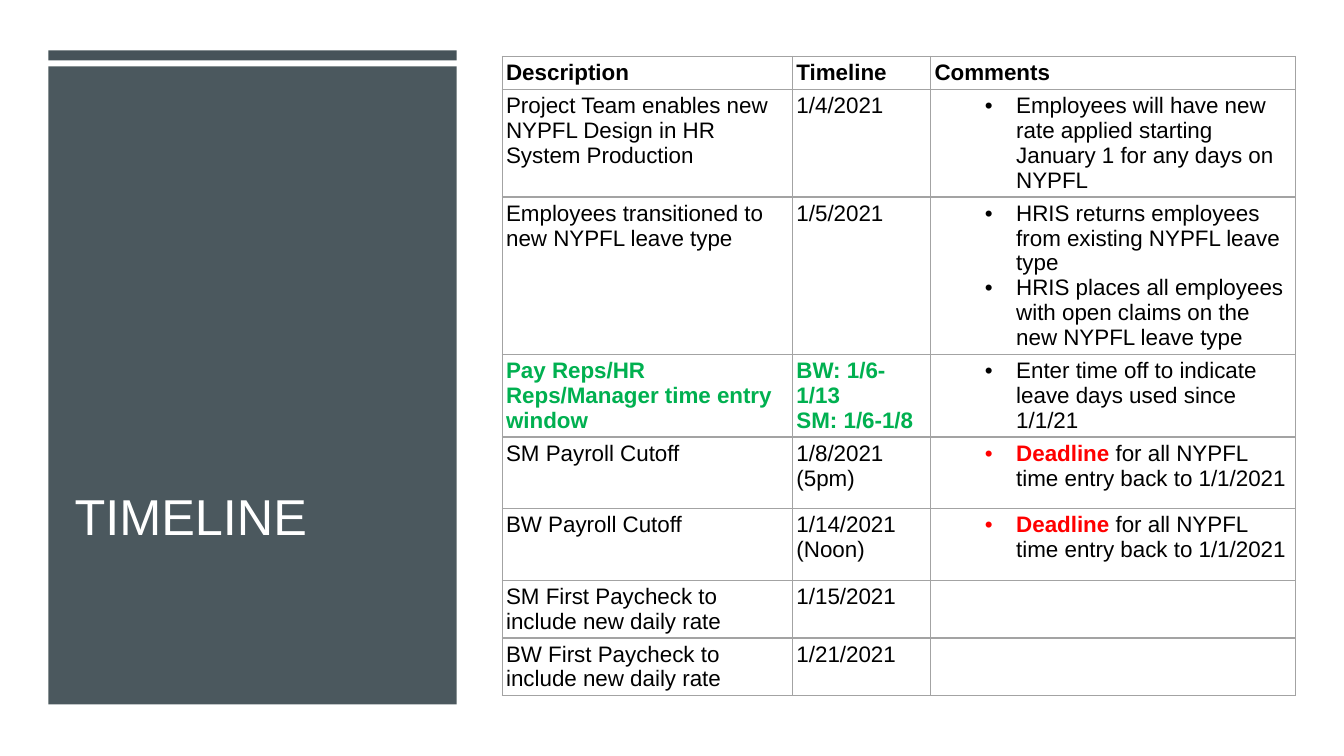
from dataclasses import dataclass

from lxml import etree
from pptx import Presentation
from pptx.dml.color import RGBColor
from pptx.enum.shapes import MSO_SHAPE
from pptx.enum.text import MSO_ANCHOR, PP_ALIGN
from pptx.oxml.ns import qn
from pptx.util import Inches, Pt

RECT = MSO_SHAPE.RECTANGLE
BOTTOM = MSO_ANCHOR.BOTTOM
LEFT = PP_ALIGN.LEFT


@dataclass(frozen=True)
class Theme:
    """Colours, font and type sizes of the slide."""
    font: str = "Arial"
    title_size: int = 36
    table_size: int = 16
    panel: str = "465359"
    white: str = "FFFFFF"
    black: str = "000000"
    green: str = "00B050"
    red: str = "FF0000"
    border: str = "A3A3A3"


T = Theme()
PANEL_LEFT, PANEL_WIDTH = 0.48, 4.05
COL_WIDTHS = [2.88, 1.37, 3.62]
ROW_HEIGHTS = [0.27, 0.71, 1.02, 0.43, 0.71, 0.71, 0.27, 0.27]
CELL_INSET = 0.04
BULLET_LEFT, BULLET_HANG = 0.81, 0.31

HEADERS = ["Description", "Timeline", "Comments"]
DEADLINE = [("Deadline", T.red, True),
            (" for all NYPFL time entry back to 1/1/2021", T.black, False)]
PLAIN, KEY = (T.black, False), (T.green, True)
STEPS = [
    ("Project Team enables new NYPFL Design in HR System Production",
     ["1/4/2021"], PLAIN,
     [[("Employees will have new rate applied starting January 1 "
        "for any days on NYPFL", *PLAIN)]]),
    ("Employees transitioned to new NYPFL leave type", ["1/5/2021"], PLAIN,
     [[("HRIS returns employees from existing NYPFL leave type", *PLAIN)],
      [("HRIS places all employees with open claims on the new NYPFL "
        "leave type", *PLAIN)]]),
    ("Pay Reps/HR Reps/Manager time entry window",
     ["BW: 1/6-1/13", "SM: 1/6-1/8"], KEY,
     [[("Enter time off to indicate leave days used since 1/1/21", *PLAIN)]]),
    ("SM Payroll Cutoff", ["1/8/2021 (5pm)"], PLAIN, [DEADLINE]),
    ("BW Payroll Cutoff", ["1/14/2021 (Noon)"], PLAIN, [DEADLINE]),
    ("SM First Paycheck to include new daily rate", ["1/15/2021"], PLAIN, []),
    ("BW First Paycheck to include new daily rate", ["1/21/2021"], PLAIN, []),
]


def add_run(p, text, size, color, bold=False):
    """Add one formatted run to a paragraph."""
    r = p.add_run()
    r.text = text
    r.font.name = T.font
    r.font.size = Pt(size)
    r.font.bold = bold
    r.font.color.rgb = RGBColor.from_string(color)


def add_panel(group, top, height, alpha=100):
    """Add a dark rectangle to the side panel."""
    sp = group.shapes.add_shape(RECT, Inches(PANEL_LEFT), Inches(top),
                                Inches(PANEL_WIDTH), Inches(height))
    sp.shadow.inherit = False
    sp.fill.solid()
    sp.fill.fore_color.rgb = RGBColor.from_string(T.panel)
    sp.line.fill.background()
    if alpha < 100:
        clr = sp._element.spPr.find(qn("a:solidFill"))[0]
        etree.SubElement(clr, qn("a:alpha"), val=str(alpha * 1000))


def set_title(s, text):
    """Place the title placeholder over the side panel."""
    title = s.shapes.title
    s.shapes._spTree.append(title._element)
    title.left, title.top = Inches(0.64), Inches(1.67)
    title.width, title.height = Inches(3.73), Inches(3.8)
    tf = title.text_frame
    tf.word_wrap = True
    tf.vertical_anchor = BOTTOM
    p = tf.paragraphs[0]
    p.alignment = LEFT
    p.line_spacing = 0.9
    add_run(p, text, T.title_size, T.white)


def set_borders(cell):
    """Draw a thin line on each side of a cell."""
    tc_pr = cell._tc.get_or_add_tcPr()
    for i, side in enumerate(("a:lnL", "a:lnR", "a:lnT", "a:lnB")):
        ln = etree.Element(qn(side), w=str(Pt(1)))
        fill = etree.SubElement(ln, qn("a:solidFill"))
        etree.SubElement(fill, qn("a:srgbClr"), val=T.border)
        tc_pr.insert(i, ln)


def set_bullet(p):
    """Give a paragraph a hanging bullet."""
    p.level = 1
    p_pr = p._p.get_or_add_pPr()
    p_pr.set("marL", str(Inches(BULLET_LEFT)))
    p_pr.set("indent", str(-Inches(BULLET_HANG)))
    etree.SubElement(p_pr, qn("a:buFont"), typeface=T.font)
    etree.SubElement(p_pr, qn("a:buChar"), char="•")


def fill_cell(cell, paragraphs, bullets=False):
    """Format a cell and write its paragraphs run by run."""
    cell.margin_left = cell.margin_right = Inches(CELL_INSET)
    cell.margin_top = cell.margin_bottom = Inches(CELL_INSET)
    cell.fill.solid()
    cell.fill.fore_color.rgb = RGBColor.from_string(T.white)
    set_borders(cell)
    tf = cell.text_frame
    for i, runs in enumerate(paragraphs):
        p = tf.add_paragraph() if i else tf.paragraphs[0]
        if bullets:
            set_bullet(p)
        for text, color, bold in runs:
            add_run(p, text, T.table_size, color, bold)


def add_timeline(s):
    """Add the timeline table."""
    frame = s.shapes.add_table(len(STEPS) + 1, len(HEADERS),
                               Inches(4.98), Inches(0.56),
                               Inches(sum(COL_WIDTHS)),
                               Inches(sum(ROW_HEIGHTS)))
    table = frame.table
    table.first_row = table.horz_banding = False
    for col, width in zip(table.columns, COL_WIDTHS):
        col.width = Inches(width)
    for row, height in zip(table.rows, ROW_HEIGHTS):
        row.height = Inches(height)
    for j, text in enumerate(HEADERS):
        fill_cell(table.cell(0, j), [[(text, T.black, True)]])
    for i, (step, dates, style, comments) in enumerate(STEPS, 1):
        fill_cell(table.cell(i, 0), [[(step, *style)]])
        fill_cell(table.cell(i, 1), [[(date, *style)] for date in dates])
        fill_cell(table.cell(i, 2), comments, bullets=True)


def main():
    """Build the timeline slide."""
    prs = Presentation()
    prs.slide_width, prs.slide_height = Inches(13.33), Inches(7.5)
    s = prs.slides.add_slide(prs.slide_layouts[5])
    group = s.shapes.add_group_shape()
    add_panel(group, 0.66, 6.33, alpha=97)
    add_panel(group, 0.5, 0.1)
    set_title(s, "TIMELINE")
    add_timeline(s)
    prs.save("out.pptx")


if __name__ == "__main__":
    main()
